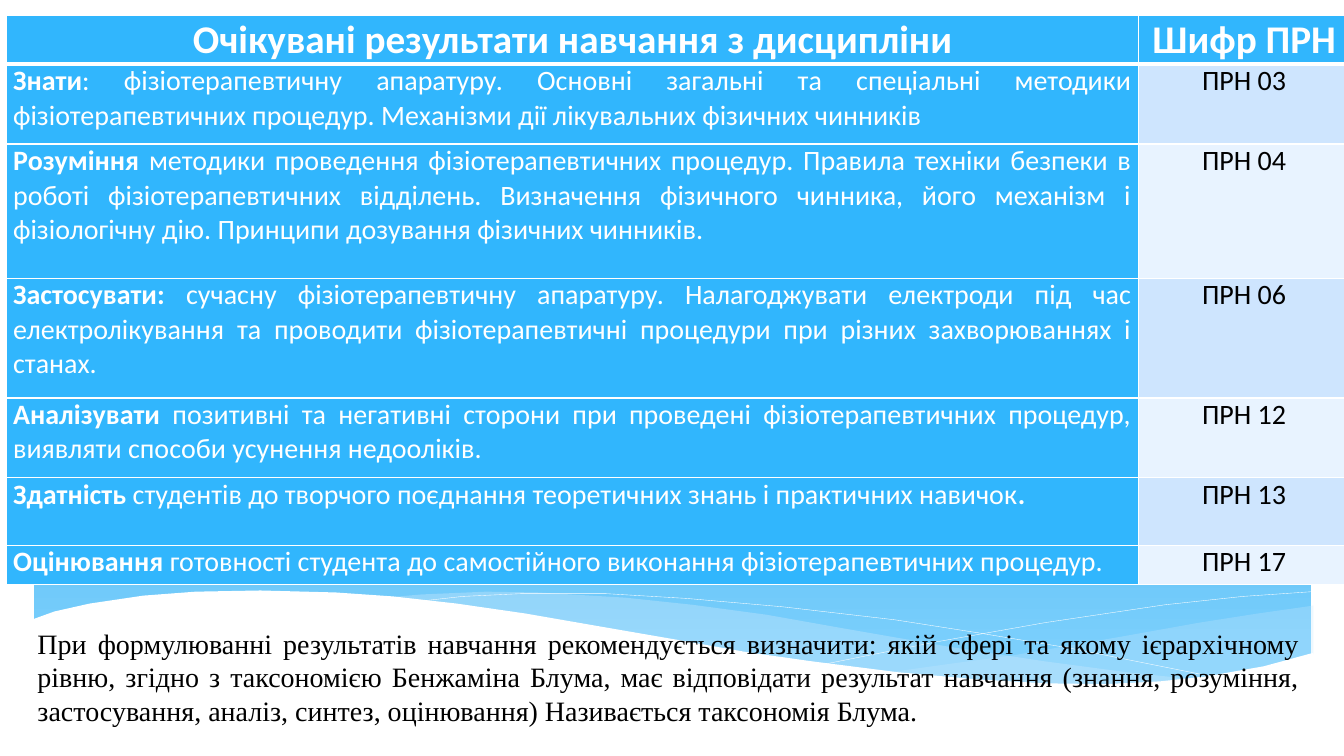
from pptx import Presentation
from pptx.dml.color import RGBColor
from pptx.enum.shapes import MSO_SHAPE
from pptx.enum.text import MSO_ANCHOR, MSO_AUTO_SIZE, PP_ALIGN
from pptx.oxml.ns import qn
from pptx.util import Cm, Pt
from lxml import etree

ROUNDED = MSO_SHAPE.ROUNDED_RECTANGLE
TOP, MIDDLE = MSO_ANCHOR.TOP, MSO_ANCHOR.MIDDLE
CENTER, JUSTIFY = PP_ALIGN.CENTER, PP_ALIGN.JUSTIFY
NO_AUTOFIT = MSO_AUTO_SIZE.NONE

WHITE, BLACK = "FFFFFF", "000000"
BLUE, PALE_WAVE = "31B6FD", "C6E7FC"
CODE_BANDS = ["CEE5FE", "E8F3FF"]

# Wave outlines: cm from the top left corner of the wave band
RIGHT_WAVE = [
    (32.31, 0.38), (30.91, 0.58), (29.44, 0.81), (27.43, 1.17), (24.77, 1.63),
    (23.14, 1.85), (21.64, 2.06), (23.11, 2.21), (24.87, 2.34), (26.82, 2.39),
    (28.47, 2.31), (29.92, 2.16), (31.17, 1.91), (32.31, 1.6)]
WIDE_WAVE = [
    (29.49, 2.26), (27.61, 2.06), (25.5, 1.78), (23.14, 1.42), (20.55, 0.97),
    (18.52, 0.61), (16.66, 0.36), (14.96, 0.18), (12.75, 0.05), (11.46, 0.03),
    (9.83, 0.1), (8.92, 0.18), (10.82, 0.38), (12.93, 0.69), (14.45, 0.97),
    (17.17, 1.42), (19.61, 1.8), (21.77, 2.08), (23.7, 2.29), (25.43, 2.36),
    (26.95, 2.39), (28.3, 2.36)]
FALLING_LINE = [
    (9.7, 0.28), (10.87, 0.15), (12.34, 0.08), (14.48, 0.08), (16.51, 0.2),
    (18.92, 0.41), (21.77, 0.74), (23.88, 1.07), (26.16, 1.45), (29.97, 2.21)]
RISING_LINE = [
    (20.02, 1.85), (22.78, 1.3), (25.55, 0.81), (28.57, 0.36), (30.53, 0.15),
    (32.28, 0.03)]
WHITE_WAVE = [
    (0, 0.74), (0.58, 0.53), (1.47, 0.33), (2.82, 0.13), (4.14, 0.03),
    (5.77, 0), (7.67, 0.05), (9.12, 0.15), (10.72, 0.33), (12.45, 0.58),
    (14.35, 0.91), (16.26, 1.24), (18.01, 1.55), (19.63, 1.78), (21.84, 2.06),
    (23.83, 2.24), (25.55, 2.34), (27.08, 2.36), (28.45, 2.29), (29.64, 2.16),
    (31.06, 1.91), (32.31, 1.57), (32.31, 3.68), (0, 3.68)]

HEADINGS = ["Очікувані результати навчання з дисципліни", "Шифр ПРН"]
# Bold opening, plain text, bold ending, code
OUTCOMES = [
    ("Знати", ": фізіотерапевтичну апаратуру. Основні загальні та спеціальні методики "
     "фізіотерапевтичних процедур. Механізми дії лікувальних фізичних чинників", "", "ПРН 03"),
    ("Розуміння ", "методики проведення фізіотерапевтичних процедур. Правила техніки безпеки "
     "в роботі фізіотерапевтичних відділень. Визначення фізичного чинника, його механізм і "
     "фізіологічну дію. Принципи дозування фізичних чинників.", "", "ПРН 04"),
    ("Застосувати: ", "сучасну фізіотерапевтичну апаратуру. Налагоджувати електроди під час "
     "електролікування та проводити фізіотерапевтичні процедури при різних захворюваннях "
     "і станах.", "", "ПРН 06"),
    ("Аналізувати ", "позитивні та негативні сторони при проведені фізіотерапевтичних "
     "процедур, виявляти способи усунення недооліків.", "", "ПРН 12"),
    ("Здатність ", "студентів до творчого поєднання теоретичних знань і практичних навичок",
     ".", "ПРН 13"),
    ("Оцінювання ", "готовності студента до самостійного виконання фізіотерапевтичних "
     "процедур.", "", "ПРН 17"),
]
COLUMN_WIDTHS = [28.55, 5.31]
ROW_HEIGHTS = [1.22, 2.01, 3.38, 3.02, 2.01, 1.7, 0.99]
BLOOM_NOTE = (
    "При формулюванні результатів навчання рекомендується визначити: якій сфері та якому "
    "ієрархічному рівню, згідно з таксономією Бенжаміна Блума, має відповідати результат "
    "навчання (знання, розуміння, застосування, аналіз, синтез, оцінювання) Називається "
    "таксономія Блума.")


def rgb(value):
    return RGBColor.from_string(value)


def format_run(run, font, size, color, bold=False):
    run.font.name = font
    run.font.size = Pt(size)
    run.font.bold = bold
    run.font.color.rgb = rgb(color)


def add_backdrop(slide, left, top, width, height):
    backdrop = slide.shapes.add_shape(ROUNDED, Cm(left), Cm(top), Cm(width), Cm(height))
    backdrop.adjustments[0] = 0.01
    backdrop.shadow.inherit = False
    backdrop.line.fill.background()
    backdrop.fill.gradient()
    backdrop.fill.gradient_angle = 270
    for stop, color in zip(backdrop.fill.gradient_stops, ["0293E0", "83D3FE"]):
        stop.color.rgb = rgb(color)


def add_waves(slide, left, top):
    def draw(points, closed):
        (start_x, start_y), *rest = [(Cm(left + x), Cm(top + y)) for x, y in points]
        builder = slide.shapes.build_freeform(start_x, start_y)
        builder.add_line_segments(rest, close=closed)
        wave = builder.convert_to_shape()
        wave.shadow.inherit = False
        return wave

    def fill_wave(points, color, opacity):
        wave = draw(points, True)
        wave.line.fill.background()
        wave.fill.solid()
        wave.fill.fore_color.rgb = rgb(color)
        tint = wave.fill._xPr.find(qn("a:solidFill"))[0]
        etree.SubElement(tint, qn("a:alpha"), val=str(opacity * 1000))

    fill_wave(RIGHT_WAVE, PALE_WAVE, 29)
    fill_wave(WIDE_WAVE, PALE_WAVE, 40)
    for points in (FALLING_LINE, RISING_LINE):
        curve = draw(points, False)
        curve.fill.background()
        curve.line.color.rgb = rgb(WHITE)
        curve.line.width = Pt(0.25)
    fill_wave(WHITE_WAVE, WHITE, 100)


def style_cell(cell, fill, anchor, top_border, bottom_border):
    cell.margin_left = cell.margin_right = Cm(0.18)
    cell.margin_top = cell.margin_bottom = 0
    cell.vertical_anchor = anchor
    # Borders come before the fill in the cell properties
    properties = cell._tc.get_or_add_tcPr()
    for side, points in zip("LRTB", (1, 1, top_border, bottom_border)):
        border = etree.SubElement(properties, qn("a:ln" + side), w=str(Pt(points)))
        solid = etree.SubElement(border, qn("a:solidFill"))
        etree.SubElement(solid, qn("a:srgbClr"), val=WHITE)
    cell.fill.solid()
    cell.fill.fore_color.rgb = rgb(fill)


def add_outcomes_table(slide, left, top):
    table = slide.shapes.add_table(
        len(ROW_HEIGHTS), len(COLUMN_WIDTHS), Cm(left), Cm(top),
        Cm(sum(COLUMN_WIDTHS)), Cm(sum(ROW_HEIGHTS))).table
    for column, width in zip(table.columns, COLUMN_WIDTHS):
        column.width = Cm(width)
    for row, height in zip(table.rows, ROW_HEIGHTS):
        row.height = Cm(height)

    def write(row, column, pieces, alignment, size, color):
        paragraph = table.cell(row, column).text_frame.paragraphs[0]
        paragraph.alignment = alignment
        for text, bold in pieces:
            if text:
                run = paragraph.add_run()
                run.text = text
                format_run(run, "Calibri", size, color, bold)

    # Header row
    for column, heading in enumerate(HEADINGS):
        style_cell(table.cell(0, column), BLUE, MIDDLE, 1, 3)
        write(0, column, [(heading, True)], CENTER, 28, WHITE)

    # Learning outcomes with their codes
    for row, (opening, body, ending, code) in enumerate(OUTCOMES, start=1):
        top_border = 3 if row == 1 else 1
        style_cell(table.cell(row, 0), BLUE, TOP, top_border, 1)
        style_cell(table.cell(row, 1), CODE_BANDS[(row - 1) % 2], TOP, top_border, 1)
        write(row, 0, [(opening, True), (body, False), (ending, True)], JUSTIFY, 20, WHITE)
        write(row, 1, [(code, False)], CENTER, 20, BLACK)


def place_bloom_note(slide, left, top, width, height):
    note = slide.placeholders[1]
    note.left, note.top, note.width, note.height = Cm(left), Cm(top), Cm(width), Cm(height)
    frame = note.text_frame
    frame.text = BLOOM_NOTE
    frame.word_wrap = True
    frame.auto_size = NO_AUTOFIT
    frame.vertical_anchor = TOP
    paragraph = frame.paragraphs[0]
    paragraph.alignment = JUSTIFY
    paragraph.space_before = Pt(4)
    format_run(paragraph.runs[0], "Times New Roman", 20, BLACK)
    # Bring the note in front of the waves
    slide.shapes._spTree.append(note._element)


def main():
    presentation = Presentation()
    presentation.slide_width, presentation.slide_height = Cm(33.87), Cm(19.05)
    slide = presentation.slides.add_slide(presentation.slide_layouts[0])
    title = slide.shapes.title._element
    title.getparent().remove(title)
    add_backdrop(slide, 0.85, 0.64, 32.2, 16.76)
    add_waves(slide, 0.79, 14.88)
    add_outcomes_table(slide, 0.15, 0.4)
    place_bloom_note(slide, 0.69, 15.65, 32.31, 3.02)
    presentation.save("out.pptx")


if __name__ == "__main__":
    main()
